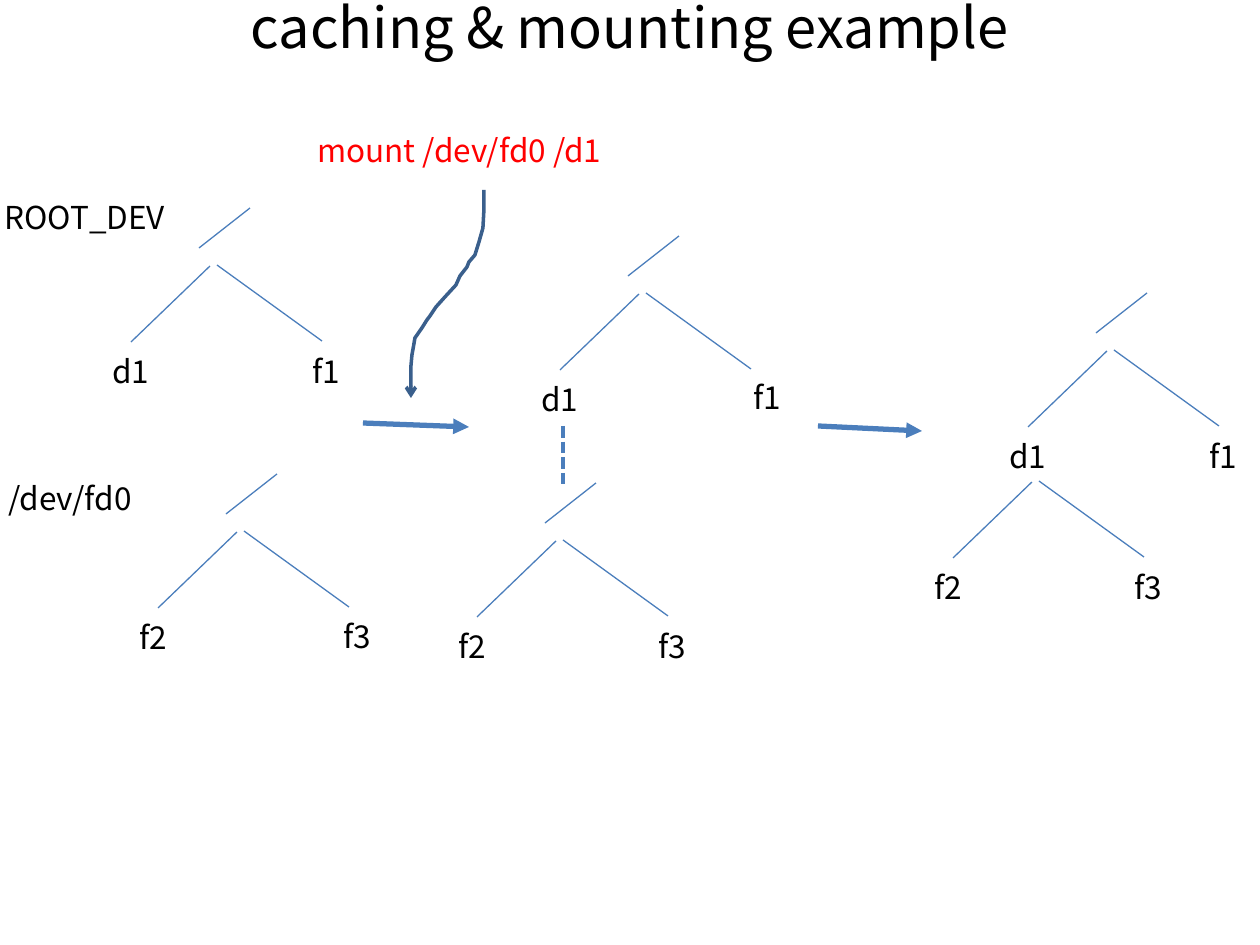
from lxml.etree import SubElement
from pptx import Presentation
from pptx.dml.color import RGBColor
from pptx.enum.dml import MSO_LINE
from pptx.enum.shapes import MSO_CONNECTOR
from pptx.enum.text import MSO_ANCHOR, MSO_AUTO_SIZE, PP_ALIGN
from pptx.oxml.ns import qn
from pptx.util import Pt

EMU_PER_PX = 914400 / 126
FONT = "Noto Sans CJK KR"
BLACK, RED, BLUE, NAVY = "000000", "FF0000", "4B7EBC", "3A5F8C"
BRANCHES = [((0, 0), (-79, 76)), ((7, -1), (112, 75))]
ROOT_SLASH = ((40, -58), (-11, -18))
MOUNT_PATH = [
    (484, 190), (484, 209), (483, 228), (479, 242), (475, 255), (469, 262),
    (467, 267), (460, 276), (456, 285), (445, 297), (436, 307), (430, 316),
    (427, 320), (422, 328), (415, 338), (414, 344), (412, 355), (411, 366),
    (411, 398),
]


def px(length):
    return round(length * EMU_PER_PX)


def color(value):
    return RGBColor.from_string(value)


def write(para, text, size, fill):
    span = para.add_run()
    span.text = text
    span.font.name = FONT
    span.font.size = Pt(size)
    span.font.color.rgb = color(fill)


def add_title(page, text):
    title = page.shapes.title
    title.left, title.top, title.width, title.height = map(px, (63, -1, 1134, 54))
    frame = title.text_frame
    frame.auto_size = MSO_AUTO_SIZE.NONE
    frame.vertical_anchor = MSO_ANCHOR.MIDDLE
    para = frame.paragraphs[0]
    para.alignment = PP_ALIGN.CENTER
    write(para, text, 32, BLACK)


def add_label(page, text, left, top, width=100, fill=BLACK):
    box = page.shapes.add_textbox(px(left), px(top), px(width), px(50))
    frame = box.text_frame
    frame.word_wrap = True
    frame.auto_size = MSO_AUTO_SIZE.SHAPE_TO_FIT_TEXT
    write(frame.paragraphs[0], text, 18, fill)


def add_arrowhead(shape, kind):
    SubElement(shape.line._get_or_add_ln(), qn("a:tailEnd"), type=kind)


def add_line(page, start, end, weight=0.75):
    line = page.shapes.add_connector(
        MSO_CONNECTOR.STRAIGHT, *map(px, (*start, *end)))
    line.line.color.rgb = color(BLUE)
    line.line.width = Pt(weight)
    SubElement(line._element.spPr, qn("a:effectLst"))
    return line


def add_step_arrow(page, start, end):
    add_arrowhead(add_line(page, start, end, 3), "triangle")


def add_tree(page, apex, names, right_label=(90, 80), has_root=True):
    """Draw two branches below the apex; the right label's offset can vary."""
    x, y = apex
    lines = [ROOT_SLASH] * has_root + BRANCHES
    for (x1, y1), (x2, y2) in lines:
        add_line(page, (x + x1, y + y1), (x + x2, y + y2))
    for name, (dx, dy) in zip(names, ((-110, 80), right_label)):
        add_label(page, name, x + dx, y + dy)


def add_mount_curve(page):
    (x, y), *rest = MOUNT_PATH
    builder = page.shapes.build_freeform(x, y, EMU_PER_PX)
    builder.add_line_segments(rest, close=False)
    curve = builder.convert_to_shape()
    curve.shadow.inherit = False
    curve.fill.background()
    curve.line.color.rgb = color(NAVY)
    curve.line.width = Pt(2)
    add_arrowhead(curve, "arrow")


def main():
    deck = Presentation()
    deck.slide_width, deck.slide_height = px(1260), px(945)
    page = deck.slides.add_slide(deck.slide_layouts[5])
    add_title(page, "caching & mounting example")

    # The two separate file systems
    add_tree(page, (210, 266), ("d1", "f1"))
    add_tree(page, (237, 532), ("f2", "f3"), right_label=(94, 79))
    add_label(page, "mount /dev/fd0 /d1", 305, 125, 334, RED)
    add_label(page, "ROOT_DEV", -8, 192, 238)
    add_label(page, "/dev/fd0", -4, 473, 238)

    # The second root linked to d1
    add_tree(page, (639, 294), ("d1", "f1"), right_label=(102, 78))
    add_tree(page, (556, 541), ("f2", "f3"))
    link = add_line(page, (563, 426), (563, 484), 2.25)
    link.line.dash_style = MSO_LINE.SQUARE_DOT

    # The merged result
    add_tree(page, (1107, 351), ("d1", "f1"))
    add_tree(page, (1032, 482), ("f2", "f3"), has_root=False)

    add_step_arrow(page, (363, 423), (469, 427))
    add_step_arrow(page, (818, 426), (922, 431))
    add_mount_curve(page)
    deck.save("out.pptx")


if __name__ == "__main__":
    main()
